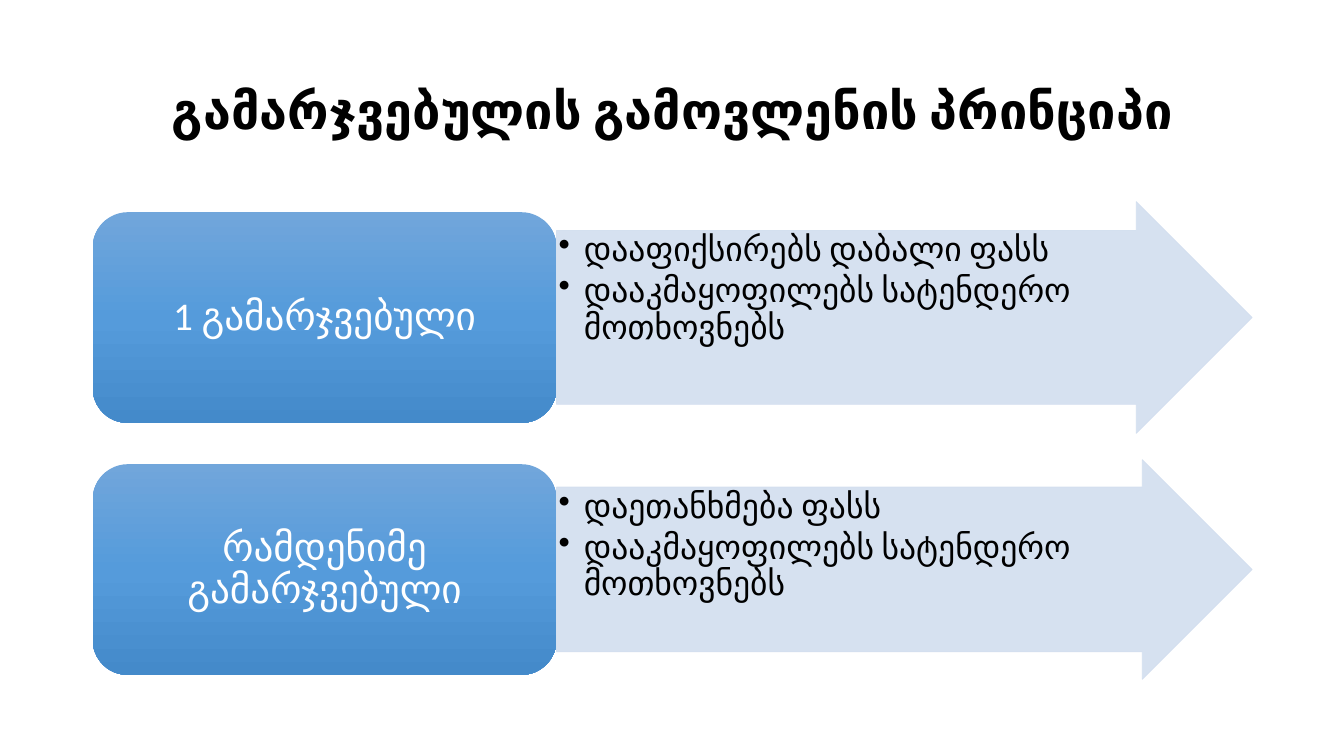
from copy import deepcopy
from dataclasses import dataclass

from lxml import etree
from pptx import Presentation
from pptx.dml.color import RGBColor
from pptx.enum.shapes import MSO_SHAPE
from pptx.enum.text import MSO_ANCHOR, PP_ALIGN
from pptx.oxml.ns import qn
from pptx.util import Inches, Pt

RIGHT_ARROW = MSO_SHAPE.RIGHT_ARROW
ROUNDED = MSO_SHAPE.ROUNDED_RECTANGLE
TOP, MIDDLE = MSO_ANCHOR.TOP, MSO_ANCHOR.MIDDLE
LEFT, CENTER = PP_ALIGN.LEFT, PP_ALIGN.CENTER

FONT = "Calibri"
COLORS = {"text": "000000", "label": "FFFFFF", "arrow": "D2DEEF"}
GRADIENT = [(0, "71A6DB"), (0.5, "559BDB"), (1, "448ACA")]

CARD_LEFT, CARD_WIDTH, CARD_HEIGHT = 0.92, 4.6, 2.09
LABEL_INSET = 0.1
ARROW_LEFT, ARROW_WIDTH = CARD_LEFT + CARD_WIDTH, 6.9
SHAFT_RATIO, HEAD_RATIO = 0.75, 0.5


@dataclass
class Principle:
    label: str
    conditions: list[str]
    center: float
    arrow_height: float


@dataclass
class TextStyle:
    size: float
    color: str
    align: int = CENTER
    anchor: int = MIDDLE
    margins: tuple[float, float] = (0.1, 0.05)
    space_after: int = 0
    bold: bool = False
    bulleted: bool = False


TITLE = TextStyle(36, "text", bold=True)
LABEL = TextStyle(28, "label", margins=(0.12, 0.06), space_after=35)
CONDITIONS = TextStyle(24, "text", LEFT, TOP, (0.02, 0.02), 15, bulleted=True)

PRINCIPLES = [
    Principle("1 გამარჯვებული",
              ["დააფიქსირებს დაბალი ფასს", "დააკმაყოფილებს სატენდერო მოთხოვნებს"],
              3.15, 2.3),
    Principle("რამდენიმე გამარჯვებული",
              ["დაეთანხმება ფასს", "დააკმაყოფილებს სატენდერო მოთხოვნებს"],
              5.65, 2.18),
]


def add_text(slide, box: tuple, lines: list[str], style: TextStyle) -> None:
    frame = slide.shapes.add_textbox(*map(Inches, box)).text_frame
    frame.word_wrap = True
    frame.vertical_anchor = style.anchor
    frame.margin_left = frame.margin_right = Inches(style.margins[0])
    frame.margin_top = frame.margin_bottom = Inches(style.margins[1])
    frame.text = "\n".join(lines)
    for paragraph in frame.paragraphs:
        paragraph.alignment = style.align
        paragraph.line_spacing = 0.9
        properties = paragraph._p.get_or_add_pPr()
        if style.space_after:
            spacing = etree.SubElement(properties, qn("a:spcAft"))
            etree.SubElement(spacing, qn("a:spcPct"), val=str(style.space_after * 1000))
        if style.bulleted:
            paragraph.level = 1
            properties.set("marL", str(Inches(0.25)))
            properties.set("indent", str(Inches(-0.25)))
            etree.SubElement(properties, qn("a:buChar"), char="•")
        for run in paragraph.runs:
            run.font.name = FONT
            run.font.size = Pt(style.size)
            run.font.bold = style.bold
            run.font.color.rgb = RGBColor.from_string(COLORS[style.color])


def add_arrow(slide, principle: Principle) -> None:
    height = principle.arrow_height
    box = (ARROW_LEFT, principle.center - height / 2, ARROW_WIDTH, height)
    arrow = slide.shapes.add_shape(RIGHT_ARROW, *map(Inches, box))
    arrow.shadow.inherit = False
    arrow.adjustments[0], arrow.adjustments[1] = SHAFT_RATIO, HEAD_RATIO
    arrow.line.width = Pt(0.5)
    for fill in (arrow.fill, arrow.line.fill):
        fill.solid()
        fill.fore_color.rgb = RGBColor.from_string(COLORS["arrow"])
    # Slight transparency on fill and outline
    for color in arrow._element.spPr.iter(qn("a:srgbClr")):
        etree.SubElement(color, qn("a:alpha"), val="90000")


def add_card(slide, center: float) -> None:
    box = (CARD_LEFT, center - CARD_HEIGHT / 2, CARD_WIDTH, CARD_HEIGHT)
    card = slide.shapes.add_shape(ROUNDED, *map(Inches, box))
    card.shadow.inherit = False
    card.line.fill.background()
    card.fill.gradient()
    card.fill.gradient_angle = 270
    # The default gradient has two stops; a third is added
    stop_list = card._element.spPr.find(".//" + qn("a:gsLst"))
    stop_list.append(deepcopy(stop_list[0]))
    for stop, (position, color) in zip(card.fill.gradient_stops, GRADIENT):
        stop.position = position
        stop.color.rgb = RGBColor.from_string(color)


def add_principle(slide, principle: Principle) -> None:
    # Arrow with its conditions, which reach halfway into the head
    add_arrow(slide, principle)
    height = principle.arrow_height
    shaft = height * SHAFT_RATIO
    text_width = ARROW_WIDTH - height * HEAD_RATIO * SHAFT_RATIO
    add_text(slide, (ARROW_LEFT, principle.center - shaft / 2, text_width, shaft),
             principle.conditions, CONDITIONS)

    # Card with its label
    add_card(slide, principle.center)
    label_height = CARD_HEIGHT - 2 * LABEL_INSET
    add_text(slide, (CARD_LEFT + LABEL_INSET, principle.center - label_height / 2,
                     CARD_WIDTH - 2 * LABEL_INSET, label_height),
             [principle.label], LABEL)


def main() -> None:
    presentation = Presentation()
    presentation.slide_width = Inches(13.33)
    presentation.slide_height = Inches(7.5)
    slide = presentation.slides.add_slide(presentation.slide_layouts[6])

    add_text(slide, (0.92, 0.4, 11.5, 1.45),
             ["გამარჯვებულის გამოვლენის პრინციპი"], TITLE)
    for principle in PRINCIPLES:
        add_principle(slide, principle)

    presentation.save("out.pptx")


if __name__ == "__main__":
    main()
